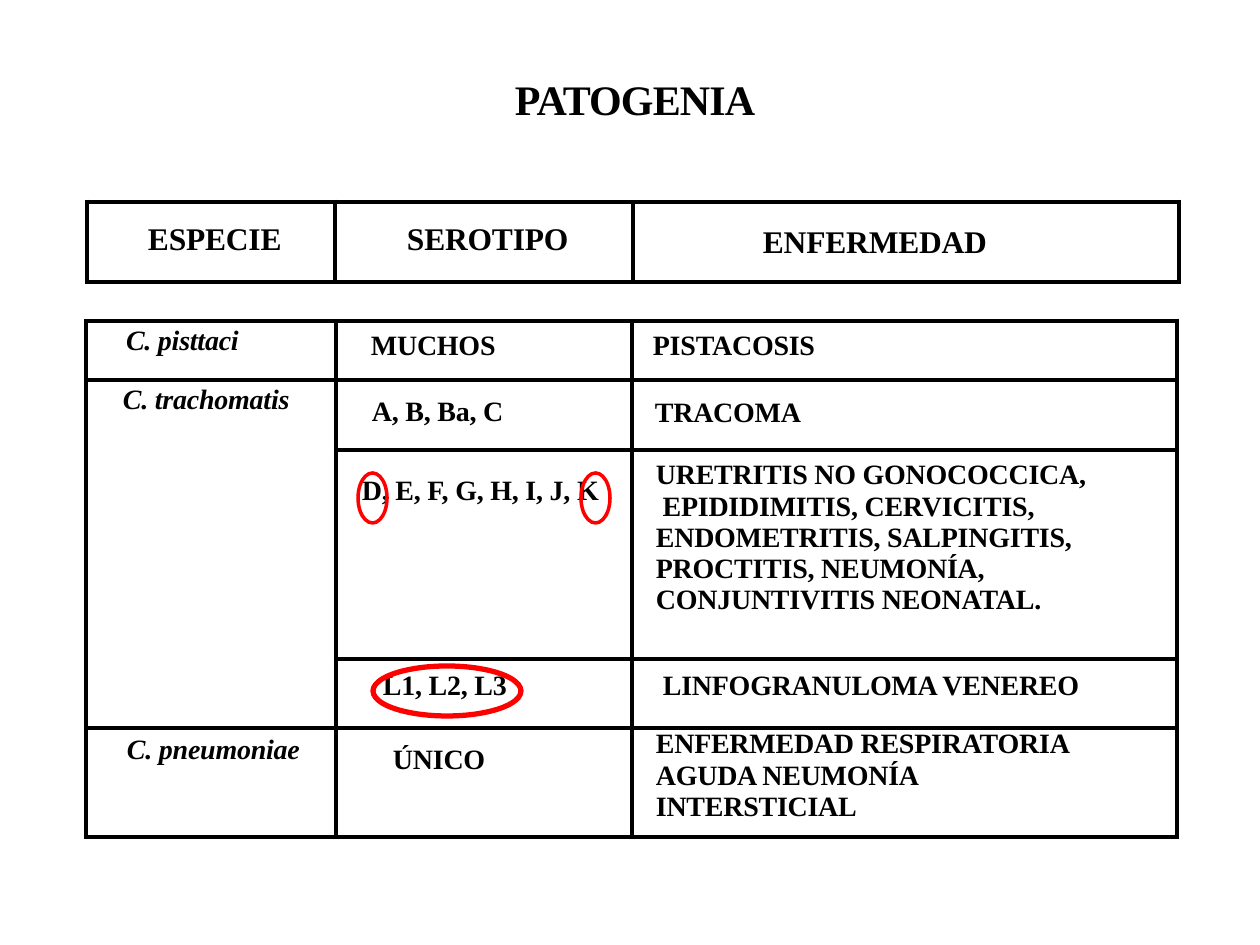
import pptx
import pptx.util
import pptx.dml.color
import pptx.enum.shapes
import pptx.enum.text
import pptx.oxml
import pptx.oxml.ns

PX = 914400 / 126
FONT, BLACK, RED = "Times New Roman", "000000", "FF0000"


def px(n):
    return pptx.util.Emu(round(n * PX))


def color(hex_code):
    return pptx.dml.color.RGBColor.from_string(hex_code)


def write(tf, text, size=16, italic=False, align="LEFT", spacing=-10):
    """Fill a text frame; each newline is a line break."""
    p = tf.paragraphs[0]
    p.alignment = getattr(pptx.enum.text.PP_ALIGN, align)
    for i, line in enumerate(text.split("\n")):
        if i:
            p.add_line_break()
        r = p.add_run()
        r.text = line
        r.font.name, r.font.size = FONT, pptx.util.Pt(size)
        r.font.bold, r.font.italic = True, italic
        r.font.color.rgb = color(BLACK)
        r.font._element.set("spc", str(spacing))


class Page:
    def __init__(self, s, border=3):
        self.s = s
        self.border = border

    def title(self, x, y, w, h, text):
        tf = self.s.shapes.add_textbox(px(x), px(y), px(w), px(h)).text_frame
        tf.word_wrap = True
        tf.margin_left = tf.margin_right = tf.margin_top = tf.margin_bottom = 0
        write(tf, text, size=24, align="CENTER", spacing=-50)

    def frame(self, cell):
        tc_pr = cell._tc.get_or_add_tcPr()
        for side in "LRTB":
            tc_pr.append(pptx.oxml.parse_xml(
                f'<a:ln{side} {pptx.oxml.ns.nsdecls("a")} w="{self.border * 12700}">'
                f'<a:solidFill><a:srgbClr val="{BLACK}"/></a:solidFill></a:ln{side}>'))
        cell.fill.background()

    def table(self, x, y, cols, rows, cells, merges=(), size=16):
        """Each cell is (left inset, top inset, text, italic), or None."""
        t = self.s.shapes.add_table(len(rows), len(cols), px(x), px(y),
                                    px(sum(cols)), px(sum(rows))).table
        t.first_row = t.horz_banding = False
        for col, w in zip(t.columns, cols):
            col.width = px(w)
        for row, h in zip(t.rows, rows):
            row.height = px(h)
        for first, last in merges:
            t.cell(*first).merge(t.cell(*last))
        for i, line in enumerate(cells):
            for j, content in enumerate(line):
                cell = t.cell(i, j)
                self.frame(cell)
                cell.margin_right = cell.margin_bottom = 0
                if content:
                    left, top, text, italic = content
                    cell.margin_left, cell.margin_top = px(left), px(top)
                    write(cell.text_frame, text, size, italic)

    def ring(self, x, y, w, h, width):
        sp = self.s.shapes.add_shape(pptx.enum.shapes.MSO_SHAPE.OVAL,
                                     px(x), px(y), px(w), px(h))
        sp.shadow.inherit = False
        sp.fill.background()
        sp.line.color.rgb = color(RED)
        sp.line.width = pptx.util.Pt(width)


def main():
    prs = pptx.Presentation()
    prs.slide_width, prs.slide_height = px(1260), px(945)
    page = Page(prs.slides.add_slide(prs.slide_layouts[6]))

    # Title
    page.title(325, 73, 620, 97, "PATOGENIA")

    # Column headings
    page.table(87, 202, [248, 298, 546], [80], [[
        (61, 20, "ESPECIE", False),
        (72, 20, "SEROTIPO", False),
        (130, 23, "ENFERMEDAD", False)]], size=18)

    # Species, serotypes and diseases
    page.table(86, 321, [250, 296, 545], [59, 70, 209, 69, 109], [
        [(40, 5, "C. pisttaci", True),
         (35, 10, "MUCHOS", False),
         (21, 10, "PISTACOSIS", False)],
        [(37, 5, "C. trachomatis", True),
         (36, 17, "A, B, Ba, C", False),
         (23, 18, "TRACOMA", False)],
        [None,
         (26, 26, "D, E, F, G, H, I, J, K", False),
         (24, 10, "URETRITIS NO GONOCOCCICA,\n EPIDIDIMITIS, CERVICITIS,\n"
                  "ENDOMETRITIS, SALPINGITIS,\nPROCTITIS, NEUMONÍA,\n"
                  "CONJUNTIVITIS NEONATAL.", False)],
        [None,
         (47, 12, "L1, L2, L3", False),
         (31, 12, "LINFOGRANULOMA VENEREO", False)],
        [(41, 7, "C. pneumoniae", True),
         (57, 17, "ÚNICO", False),
         (24, 1, "ENFERMEDAD RESPIRATORIA\nAGUDA NEUMONÍA\nINTERSTICIAL", False)],
    ], merges=[((1, 0), (3, 0))])

    # Rings around the highlighted serotypes
    page.ring(373, 666, 148, 50, 3)
    for x in (581, 358):
        page.ring(x, 473, 29, 50, 2)

    prs.save("out.pptx")


if __name__ == "__main__":
    main()
